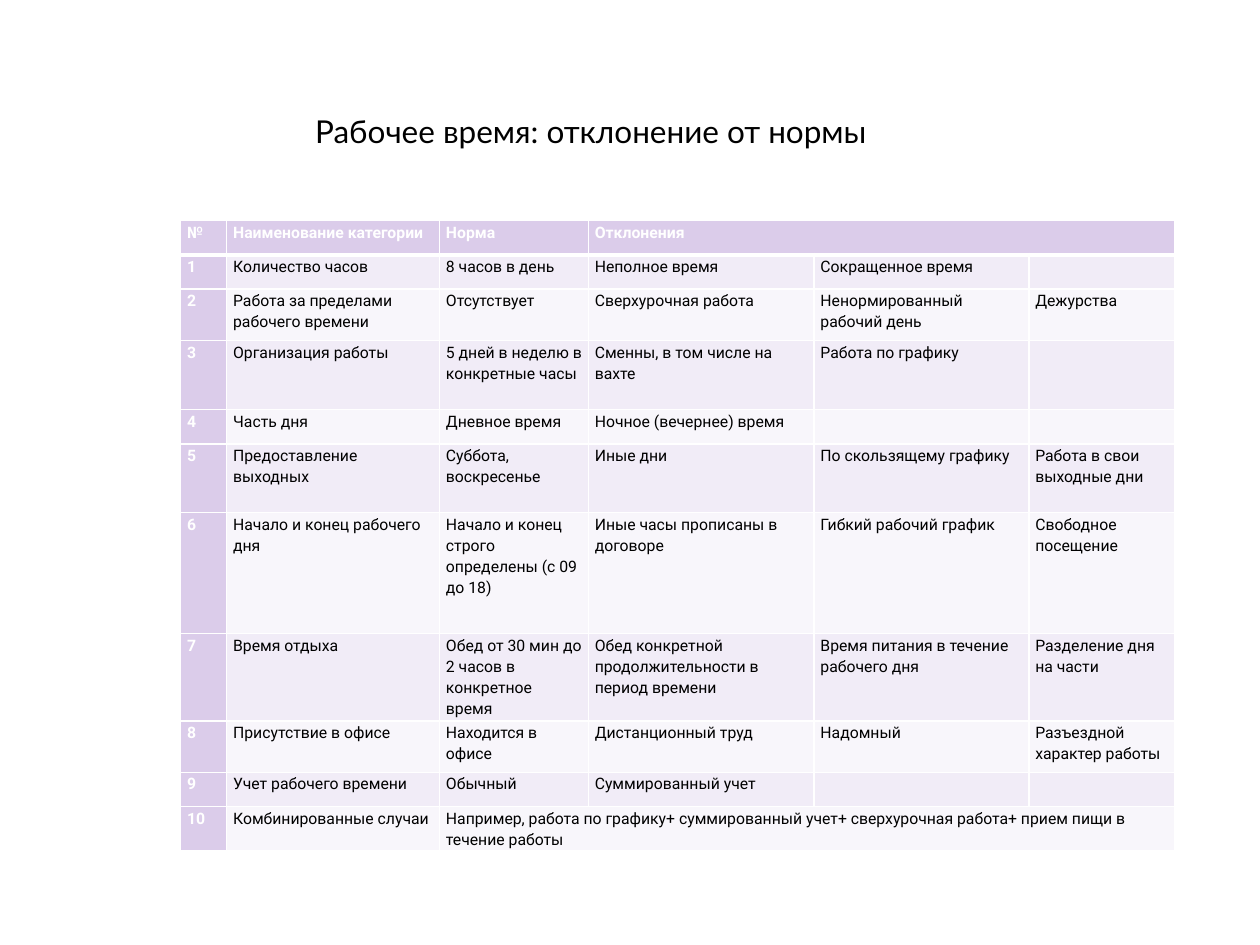
from dataclasses import dataclass

from lxml import etree
from pptx import Presentation
from pptx.dml.color import RGBColor
from pptx.enum.text import MSO_ANCHOR, MSO_AUTO_SIZE, PP_ALIGN
from pptx.oxml.ns import qn
from pptx.util import Cm, Pt

LEFT = PP_ALIGN.LEFT
MIDDLE = MSO_ANCHOR.MIDDLE
GROW = MSO_AUTO_SIZE.SHAPE_TO_FIT_TEXT

WHITE = RGBColor(0xFF, 0xFF, 0xFF)
BLACK = RGBColor(0x00, 0x00, 0x00)
LILAC = RGBColor(0xDB, 0xCC, 0xEA)
ODD_BAND = RGBColor(0xF1, 0xEC, 0xF7)
EVEN_BAND = RGBColor(0xF8, 0xF6, 0xFB)

COLUMN_WIDTHS = (0.93, 4.29, 3, 4.55, 4.33, 2.94)
TEXT_SIZE = Pt(9)


@dataclass(frozen=True)
class Category:
    number: str
    name: str
    norm: str
    deviations: tuple[str, ...] = ()
    height: float = 0.69
    merge_from: int | None = None

    def texts(self) -> list[str]:
        filled = [self.number, self.name, self.norm, *self.deviations]
        return filled + [""] * (len(COLUMN_WIDTHS) - len(filled))


CATEGORIES = (
    Category("№", "Наименование категории", "Норма", ("Отклонения",), merge_from=3),
    Category("1", "Количество часов", "8 часов в день",
             ("Неполное время", "Сокращенное время")),
    Category("2", "Работа за пределами рабочего времени", "Отсутствует",
             ("Сверхурочная работа", "Ненормированный рабочий день", "Дежурства"), 1.04),
    Category("3", "Организация работы", "5 дней в неделю в конкретные часы",
             ("Сменны, в том числе на вахте", "Работа по графику"), 1.39),
    Category("4", "Часть дня", "Дневное время", ("Ночное (вечернее) время",)),
    Category("5", "Предоставление выходных", "Суббота, воскресенье",
             ("Иные дни", "По скользящему графику", "Работа в свои выходные дни"), 1.39),
    Category("6", "Начало и конец рабочего дня",
             "Начало и конец строго определены (с 09 до 18)",
             ("Иные часы прописаны в договоре", "Гибкий рабочий график",
              "Свободное посещение"), 2.44),
    Category("7", "Время отдыха", "Обед от 30 мин до 2 часов в конкретное время",
             ("Обед конкретной продолжительности в период времени",
              "Время питания в течение рабочего дня", "Разделение дня на части"), 1.75),
    Category("8", "Присутствие в офисе", "Находится в офисе",
             ("Дистанционный труд", "Надомный", "Разъездной характер работы"), 1.04),
    Category("9", "Учет рабочего времени", "Обычный", ("Суммированный учет",)),
    Category("10", "Комбинированные случаи",
             "Например, работа по графику+ суммированный учет+ "
             "сверхурочная работа+ прием пищи в течение работы", merge_from=2),
)


def apply_format(target, values: dict) -> None:
    for attribute, value in values.items():
        setattr(target, attribute, value)


def add_borders(cell, row: int) -> None:
    properties = cell._tc.get_or_add_tcPr()
    widths = {"L": 1, "R": 1, "T": 3 if row == 1 else 1, "B": 3 if row == 0 else 1}
    for side, width in widths.items():
        line = etree.SubElement(properties, qn(f"a:ln{side}"), w=str(Pt(width)))
        fill = etree.SubElement(line, qn("a:solidFill"))
        etree.SubElement(fill, qn("a:srgbClr"), val=str(WHITE))


def fill_cell(cell, text: str, row: int, column: int) -> None:
    heading = row == 0 or column == 0
    apply_format(cell, {"margin_left": Cm(0.13), "margin_right": Cm(0.13),
                        "margin_top": 0, "margin_bottom": 0})
    add_borders(cell, row)
    cell.fill.solid()
    band = ODD_BAND if row % 2 else EVEN_BAND
    cell.fill.fore_color.rgb = LILAC if heading else band
    paragraph = cell.text_frame.paragraphs[0]
    paragraph.line_spacing = 1.15
    if not text:
        etree.SubElement(paragraph._p, qn("a:endParaRPr"), sz=str(TEXT_SIZE.centipoints))
        return
    run = paragraph.add_run()
    run.text = text
    apply_format(run.font, {"name": "Roboto", "size": TEXT_SIZE, "bold": heading})
    run.font.color.rgb = WHITE if heading else BLACK


def add_working_time_table(slide) -> None:
    frame = slide.shapes.add_table(
        len(CATEGORIES), len(COLUMN_WIDTHS), Cm(3.64), Cm(4.45),
        Cm(sum(COLUMN_WIDTHS)), Cm(sum(item.height for item in CATEGORIES)))
    table = frame.table
    apply_format(table, {"first_row": True, "first_col": True, "horz_banding": True})
    for column, width in zip(table.columns, COLUMN_WIDTHS):
        column.width = Cm(width)
    for row, category in enumerate(CATEGORIES):
        table.rows[row].height = Cm(category.height)
        for column, text in enumerate(category.texts()):
            fill_cell(table.cell(row, column), text, row, column)
        if category.merge_from is not None:
            last = table.cell(row, len(COLUMN_WIDTHS) - 1)
            table.cell(row, category.merge_from).merge(last)


def add_title(slide) -> None:
    title = slide.shapes.title
    apply_format(title, {"left": Cm(6.1), "top": Cm(2.13),
                         "width": Cm(11.73), "height": Cm(1.02)})
    title.text_frame.text = "Рабочее время: отклонение от нормы"
    apply_format(title.text_frame, {"word_wrap": False, "auto_size": GROW,
                                    "vertical_anchor": MIDDLE})
    paragraph = title.text_frame.paragraphs[0]
    paragraph.alignment = LEFT
    font = paragraph.runs[0].font
    apply_format(font, {"name": "Lato", "size": Pt(18), "bold": False})
    font.color.rgb = BLACK


def main() -> None:
    presentation = Presentation()
    apply_format(presentation, {"slide_width": Cm(25.4), "slide_height": Cm(19.05)})
    slide = presentation.slides.add_slide(presentation.slide_layouts[5])
    add_title(slide)
    add_working_time_table(slide)
    presentation.save("out.pptx")


if __name__ == "__main__":
    main()
